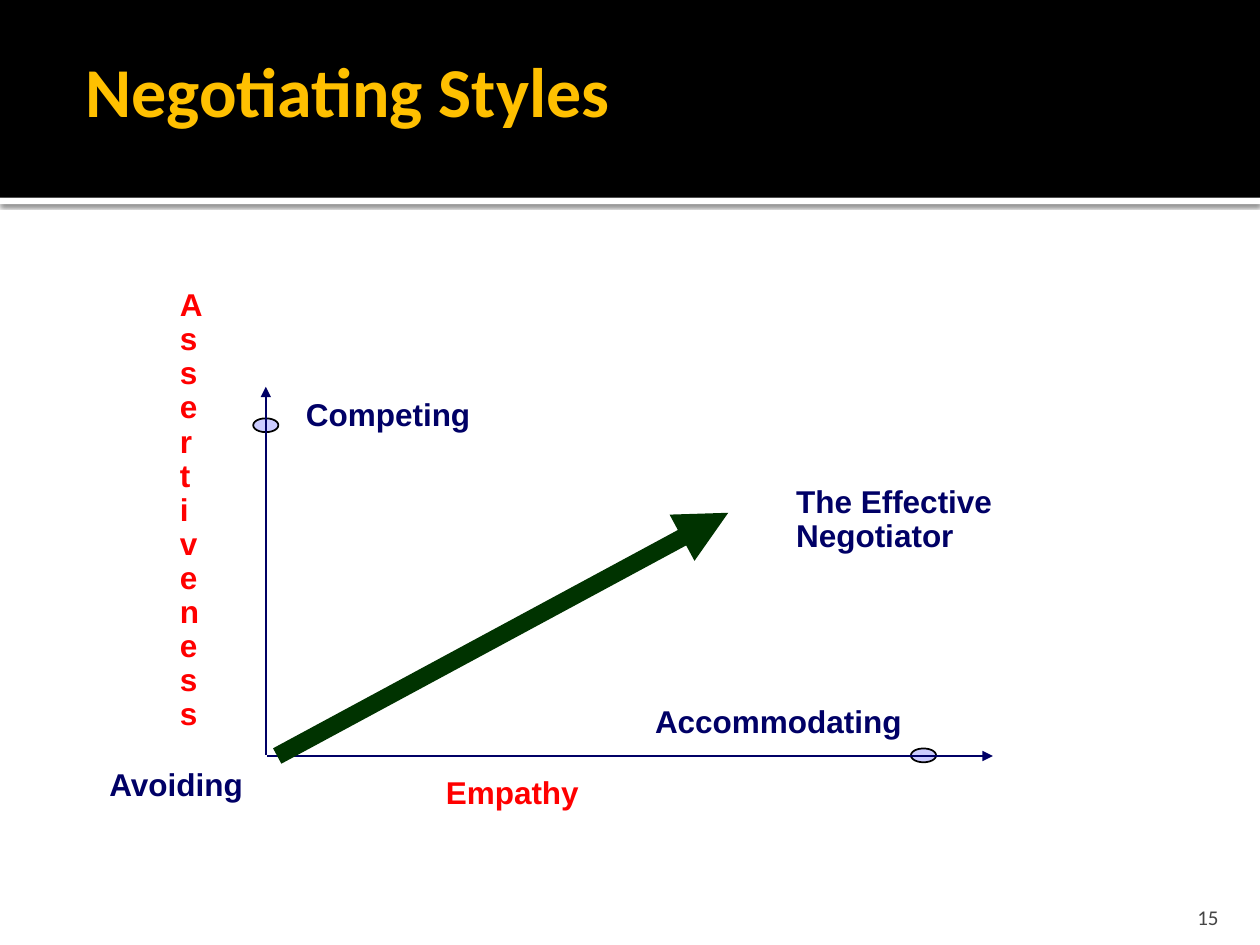
import pptx
import pptx.dml.color
import pptx.enum.shapes
import pptx.enum.text
import pptx.oxml
import pptx.oxml.ns
import pptx.util

THEME = {
    "black": "000000", "white": "FFFFFF", "navy": "000066", "red": "FF0000",
    "green": "003300", "lilac": "CCCCFF", "gold": "FFC000", "grey": "454545",
    "head": ("Calibri", 40), "label": ("Arial", 18), "foot": ("Calibri", 12),
}
KINDS = pptx.enum.shapes.MSO_SHAPE
ALIGN = pptx.enum.text.PP_ALIGN
FIT = pptx.enum.text.MSO_AUTO_SIZE
ANCHOR = pptx.enum.text.MSO_ANCHOR

deck = pptx.Presentation()
deck.slide_width = pptx.util.Inches(10)
deck.slide_height = pptx.util.Inches(7.5)
slide = deck.slides.add_slide(deck.slide_layouts[6])
shapes = slide.shapes
UNIT = deck.slide_width / 100


def grid(*spots):
    """Turn columns and rows (100 by 75 on the slide) into lengths."""
    return [round(spot * UNIT) for spot in spots]


def tint(name):
    return pptx.dml.color.RGBColor.from_string(THEME[name])


# Header band, rule beneath it, and the two marks on the axes
for kind, spot, fill, edge in [
    (KINDS.RECTANGLE, (0, 15.7, 100, 0.5), "white", None),
    (KINDS.RECTANGLE, (0, 0, 100, 15.7), "black", None),
    (KINDS.OVAL, (20.1, 33.2, 2, 1.1), "lilac", "black"),
    (KINDS.OVAL, (72.3, 59.4, 2, 1.1), "lilac", "black"),
]:
    shape = shapes.add_shape(kind, *grid(*spot))
    shape.shadow.inherit = False
    shape.fill.solid()
    shape.fill.fore_color.rgb = tint(fill)
    if edge:
        shape.line.color.rgb = tint(edge)
        shape.line.width = pptx.util.Pt(1)
    else:
        shape.line.fill.background()
    if fill == "white":
        glow = shape.element.spPr.find(pptx.oxml.ns.qn("a:effectLst"))
        glow.append(pptx.oxml.parse_xml(
            f'<a:outerShdw {pptx.oxml.ns.nsdecls("a")} blurRad="31750" '
            'dist="10160" dir="5400000" algn="tl" rotWithShape="0">'
            f'<a:srgbClr val="{THEME["black"]}"><a:alpha val="60000"/>'
            '</a:srgbClr></a:outerShdw>'))

# Axes and the main arrow
for spot, color, width, end in [
    ((21.1, 30.7, 21.1, 59.9), "navy", 1.5, "headEnd"),
    ((21.2, 60, 78.8, 60), "navy", 1, "tailEnd"),
    ((22, 60, 57.8, 40.7), "green", 10, "tailEnd"),
]:
    line = shapes.add_connector(
        pptx.enum.shapes.MSO_CONNECTOR.STRAIGHT, *grid(*spot))
    line.line.color.rgb = tint(color)
    line.line.width = pptx.util.Pt(width)
    pen = line.line._get_or_add_ln()
    pptx.oxml.ns.qn("a:ln")
    pen.append(pptx.oxml.parse_xml(
        f'<a:{end} {pptx.oxml.ns.nsdecls("a")} type="triangle"/>'))
    line.element.spPr.append(pptx.oxml.parse_xml(
        f'<a:effectLst {pptx.oxml.ns.nsdecls("a")}/>'))

# Texts: the frame format of each style, then the wording
FRAMES = {
    "label": {"word_wrap": True, "auto_size": FIT.SHAPE_TO_FIT_TEXT},
    "head": {"word_wrap": False, "auto_size": FIT.SHAPE_TO_FIT_TEXT},
    "foot": {"word_wrap": True, "vertical_anchor": ANCHOR.BOTTOM,
             "margin_bottom": 0},
}
PARAS = {
    "label": {"line_spacing": 0.9},
    "head": {},
    "foot": {"alignment": ALIGN.RIGHT},
}
for text, spot, style, color in [
    ("15", (89.7, 70.8, 8, 3), "foot", "grey"),
    ("Asse\vr\vt\vi\vveness", (13.3, 22.5, 4.5, 44), "label", "red"),
    ("Competing", (23.3, 31.2, 46.8, 3.8), "label", "navy"),
    ("The Effective Negotiator", (62.2, 38.1, 23.5, 6.5), "label", "navy"),
    ("Empathy", (34.4, 61.2, 42.4, 3.8), "label", "red"),
    ("Accommodating", (51, 55.6, 27.9, 3.8), "label", "navy"),
    ("Avoiding", (7.7, 60.6, 19, 3.8), "label", "navy"),
    ("Negotiating Styles", (5.8, 3.3, 47.3, 7.7), "head", "gold"),
]:
    box = shapes.add_textbox(*grid(*spot))
    frame = box.text_frame
    frame.text = text
    para = frame.paragraphs[0]
    face, size = THEME[style]
    for run in para.runs:
        run.font.color.rgb = tint(color)
        for key, value in {"name": face, "size": pptx.util.Pt(size),
                           "bold": style != "foot"}.items():
            setattr(run.font, key, value)
    for part, looks in [(frame, FRAMES[style]), (para, PARAS[style])]:
        for key, value in looks.items():
            setattr(part, key, value)
    if style == "head":
        box.line.color.rgb = tint("black")
        box.line.width = pptx.util.Pt(0.75)

deck.save("out.pptx")
